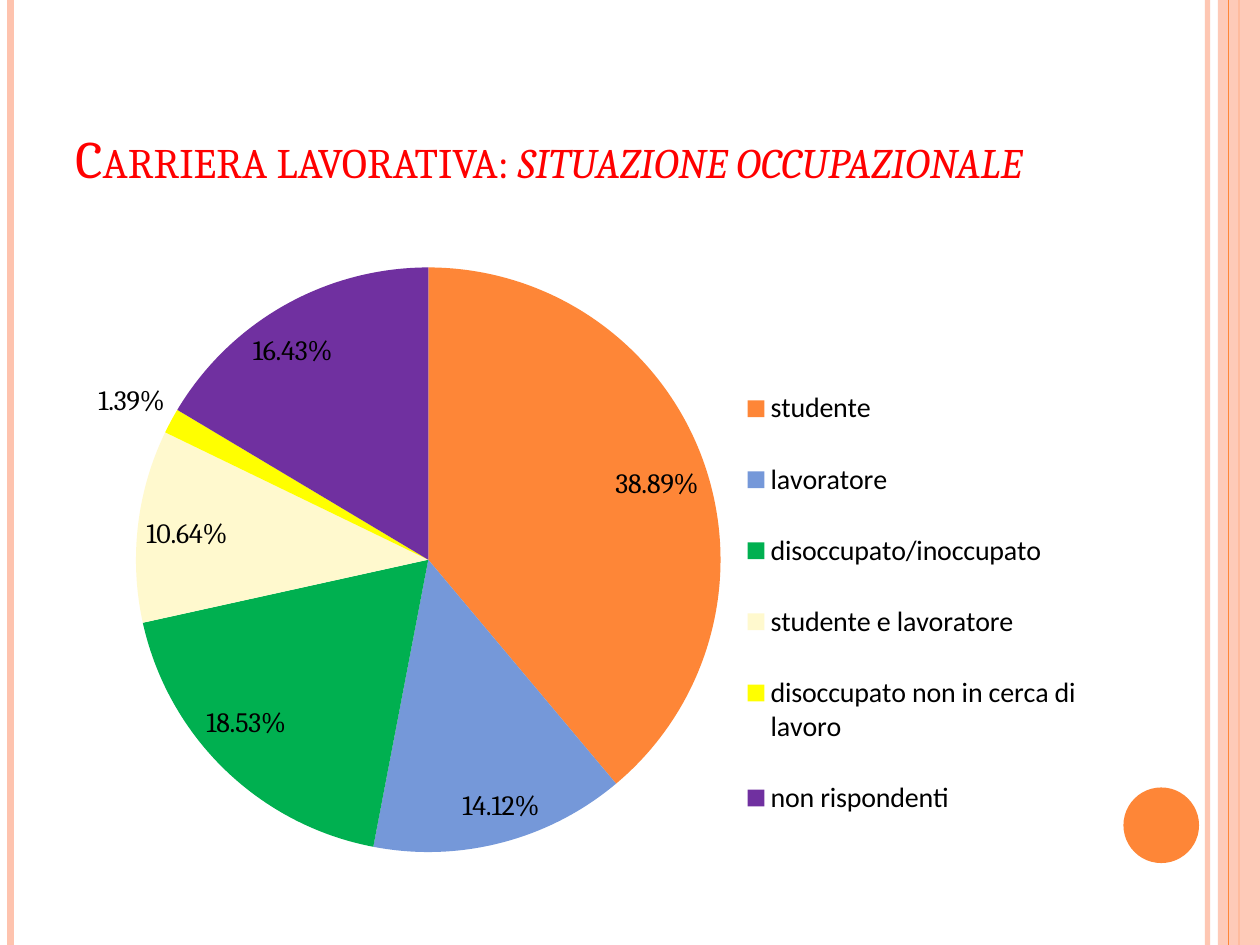
from lxml.etree import SubElement
from pptx import Presentation
from pptx.chart.data import CategoryChartData
from pptx.dml.color import RGBColor
from pptx.enum.chart import XL_CHART_TYPE as CT, XL_LABEL_POSITION as LP, XL_LEGEND_POSITION as LEG
from pptx.enum.shapes import MSO_CONNECTOR as CONN, MSO_SHAPE as SHAPE
from pptx.enum.text import MSO_ANCHOR as ANCHOR
from pptx.oxml import parse_xml
from pptx.oxml.ns import nsdecls, qn
from pptx.util import Pt

W, H = 720, 540
ORANGE, PINK = "FE8637", "FEC3AE"


def rgb(color):
    return RGBColor.from_string(color)


def set_alpha(sp, percent):
    for clr in sp._element.spPr.iter(qn("a:srgbClr")):
        SubElement(clr, qn("a:alpha")).set("val", str(percent * 1000))


def set_font(font, fmt):
    for key, value in fmt.items():
        if key == "color":
            font.color.rgb = rgb(value)
        else:
            setattr(font, key, value)


def set_layout(parent, index, x, y, w, h, inner=False):
    for old in parent.findall(qn("c:layout")):
        parent.remove(old)
    target = '<c:layoutTarget val="inner"/>' if inner else ""
    parent.insert(index, parse_xml(
        f'<c:layout {nsdecls("c")}><c:manualLayout>{target}'
        '<c:xMode val="edge"/><c:yMode val="edge"/>'
        f'<c:x val="{x}"/><c:y val="{y}"/><c:w val="{w}"/><c:h val="{h}"/>'
        '</c:manualLayout></c:layout>'))


class Deck:
    """Holds the style and the current slide, and draws each kind of element."""

    title_font = {"name": "Cambria", "size": Pt(30), "color": "FF0000"}
    label_font = {"name": "Cambria", "size": Pt(16), "color": "000000"}
    legend_font = {"name": "Calibri", "size": Pt(16), "color": "000000"}

    def __init__(self):
        self.prs = Presentation()
        self.prs.slide_width, self.prs.slide_height = Pt(W), Pt(H)
        self.s = self.prs.slides.add_slide(self.prs.slide_layouts[6])

    def rule(self, x, color, width, alpha=100):
        sp = self.s.shapes.add_connector(CONN.STRAIGHT, Pt(x), Pt(0), Pt(x), Pt(H))
        sp.line.color.rgb = rgb(color)
        sp.line.width = Pt(width)
        SubElement(sp._element.spPr, qn("a:effectLst"))
        if alpha < 100:
            set_alpha(sp, alpha)

    def shape(self, kind, x, y, w, h, color, alpha=100):
        sp = self.s.shapes.add_shape(kind, Pt(x), Pt(y), Pt(w), Pt(h))
        sp.shadow.inherit = False
        sp.fill.solid()
        sp.fill.fore_color.rgb = rgb(color)
        sp.line.fill.background()
        if alpha < 100:
            set_alpha(sp, alpha)

    def title(self, x, y, w, h, runs):
        tf = self.s.shapes.add_textbox(Pt(x), Pt(y), Pt(w), Pt(h)).text_frame
        tf.word_wrap = True
        tf.vertical_anchor = ANCHOR.BOTTOM
        p = tf.paragraphs[0]
        for text, extra in runs:
            r = p.add_run()
            r.text = text
            set_font(r.font, self.title_font | extra)
            r._r.get_or_add_rPr().set("cap", "small")

    def pie(self, x, y, w, h, slices):
        data = CategoryChartData(number_format="0.00%")
        data.categories = [name for name, _, _ in slices]
        data.add_series("Series 1", [value for _, value, _ in slices])
        chart = self.s.shapes.add_chart(CT.PIE, Pt(x), Pt(y), Pt(w), Pt(h), data).chart
        set_font(chart.font, self.label_font | {"size": Pt(10)})
        chart.has_title = False
        chart.has_legend = True
        legend = chart.legend
        legend.position = LEG.RIGHT
        legend.include_in_layout = False
        set_font(legend.font, self.legend_font)
        plot = chart.plots[0]
        plot.vary_by_categories = True
        plot.has_data_labels = True
        labels = plot.data_labels
        set_font(labels.font, self.label_font)
        for key, value in {"show_value": True, "show_percentage": False,
                           "number_format": "0.00%", "number_format_is_linked": False,
                           "position": LP.BEST_FIT}.items():
            setattr(labels, key, value)
        for i, (_, _, color) in enumerate(slices):
            fill = plot.series[0].points[i].format.fill
            fill.solid()
            fill.fore_color.rgb = rgb(color)
        area = chart._chartSpace.chart.plotArea
        set_layout(area, 0, 0.07, 0.07, 0.57, 0.87, inner=True)
        set_layout(legend._element, 1, 0.66, 0.2, 0.33, 0.74)


def main():
    deck = Deck()
    deck.rule(690, PINK, 3, 93)
    deck.rule(6, PINK, 4.5)
    deck.rule(708, ORANGE, 1.5)
    deck.shape(SHAPE.RECTANGLE, 696, 0, 24, H, PINK, 87)
    deck.rule(702, ORANGE, 0.75)
    deck.shape(SHAPE.OVAL, 642, 450, 43.2, 43.2, ORANGE)
    deck.title(36, 21.6, 588, 90, [
        ("Carriera lavorativa:", {}),
        (" situazione occupazionale", {"italic": True}),
    ])
    deck.pie(36, 126, 588, 384, [
        ("studente", 0.3889, ORANGE),
        ("lavoratore", 0.1412, "7598D9"),
        ("disoccupato/inoccupato", 0.1853, "00B050"),
        ("studente e lavoratore", 0.1064, "FFF9CE"),
        ("disoccupato non in cerca di lavoro", 0.0139, "FFFF00"),
        ("non rispondenti", 0.1643, "7030A0"),
    ])
    deck.prs.save("out.pptx")


if __name__ == "__main__":
    main()
